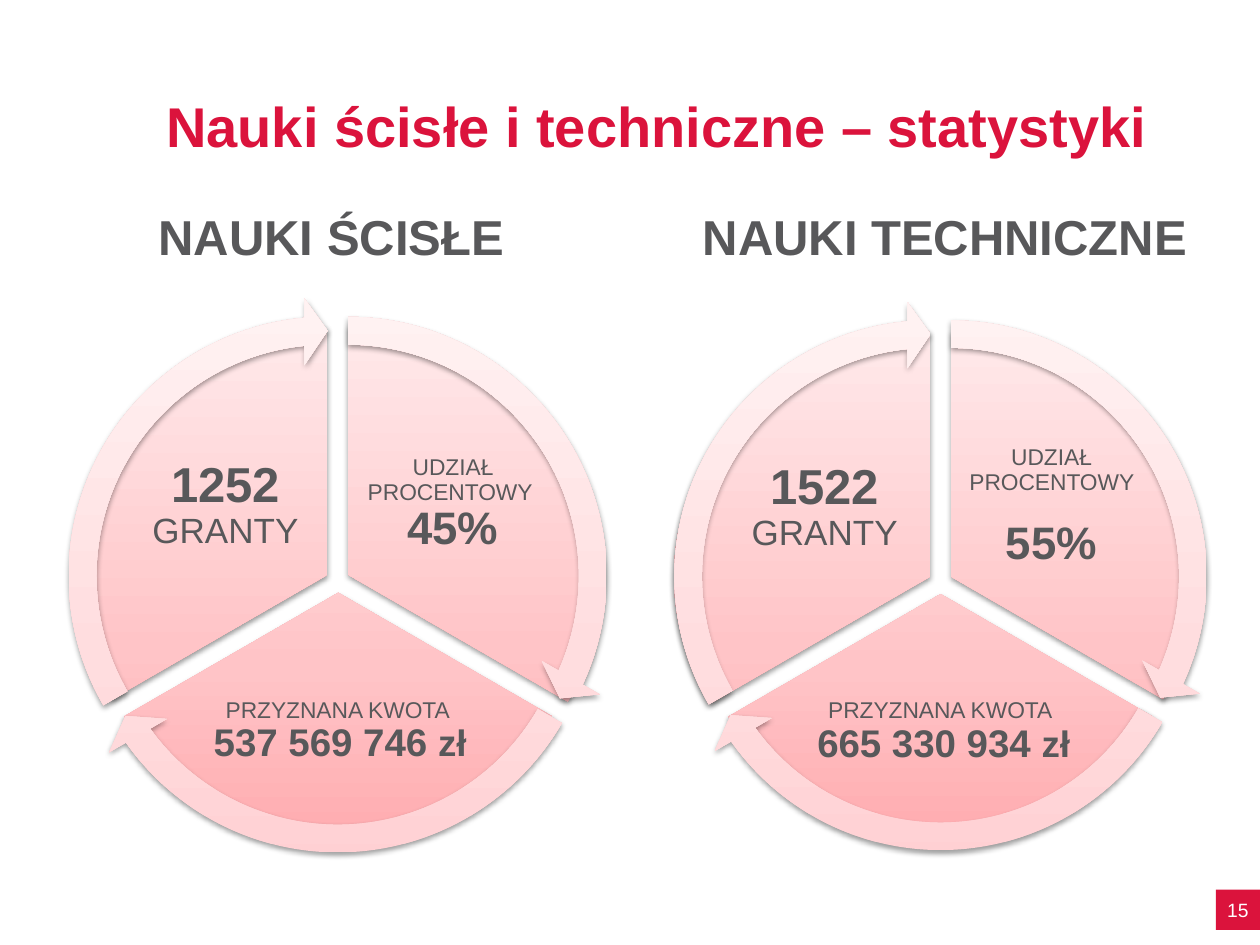
"""Build the slide of grant statistics for exact and technical sciences."""
from lxml.etree import SubElement
from pptx import Presentation
from pptx.dml.color import RGBColor
from pptx.enum.shapes import MSO_SHAPE
from pptx.enum.text import MSO_ANCHOR, PP_ALIGN
from pptx.oxml import parse_xml
from pptx.oxml.ns import nsdecls, qn
from pptx.util import Inches, Pt

CRIMSON = RGBColor(0xDB, 0x13, 0x3C)
WHITE = RGBColor(0xFF, 0xFF, 0xFF)
GRAY = RGBColor(0x58, 0x58, 0x5A)
SECTOR_STOPS = [(0, RGBColor(0xFF, 0xAC, 0xB0)), (35, RGBColor(0xFF, 0xC4, 0xC7)),
                (100, RGBColor(0xFF, 0xE9, 0xEA))]
ARROW_STOPS = [(0, RGBColor(0xFF, 0xD0, 0xD3)), (35, RGBColor(0xFF, 0xDD, 0xDF)),
               (100, RGBColor(0xFF, 0xF2, 0xF2))]
FONT = "Arial"
BREAK = "\n"

TITLE = "Nauki ścisłe i techniczne – statystyki"
PAGE_NUMBER = "15"
SECTOR_ANGLES = [(162, 18), (18, 90), (90, 162)]
ARROW_ANGLES = [(14.73, 161.99), (86.72, 18.01), (158.73, 90)]
ARROW_SHIFTS = [(0, 0), (-0.08, 0.14), (-0.16, 0)]
LABEL_INSETS = [0.02, 0.02, 0.04]

CYCLES = [
    {
        "heading": ("NAUKI ŚCISŁE", (1.16, 1.59, 3.47, 0.57)),
        "sectors": [(0.73, 2.58, 4.06, 3.96), (0.72, 2.74, 3.93, 3.93), (0.63, 2.6, 3.93, 3.93)],
        "arrow": (0.55, 2.36, 4.42),
        "labels": [
            ((2.87, 3.42, 1.45, 1.18),
             [("UDZIAŁ PROCENTOWY ", 13, False), (BREAK, 13, False), ("45%", 26, True)]),
            ((1.65, 5.29, 2.1, 1.03),
             [("PRZYZNANA KWOTA ", 13, False), (BREAK, 13, False),
              ("537 569 746 ", 22, True), ("zł", 21, True)]),
            ((1.09, 3.43, 1.4, 1.17),
             [("1252", 28, True), (" ", 22, False), ("GRANTY", 20, False)]),
        ],
    },
    {
        "heading": ("NAUKI TECHNICZNE", (5.48, 1.59, 4.34, 0.57)),
        "sectors": [(5.6, 2.63, 3.89, 3.89), (5.52, 2.77, 3.89, 3.89), (5.35, 2.63, 4.07, 3.89)],
        "arrow": (5.36, 2.39, 4.37),
        "labels": [
            ((7.65, 3.45, 1.39, 1.16),
             [("UDZIAŁ PROCENTOWY ", 13, False), (BREAK, 13, False), ("55%", 26, True)]),
            ((6.45, 5.29, 2.08, 1.02),
             [("PRZYZNANA KWOTA", 13, False), (" ", 15, False), (BREAK, 15, False),
              ("665 330 934 ", 22, True), ("zł", 21, True)]),
            ((5.82, 3.45, 1.45, 1.16),
             [("1522 ", 28, True), ("GRANTY", 20, False)]),
        ],
    },
]


def inches(box):
    return [Inches(length) for length in box]


def write(paragraph, runs, color):
    for text, size, bold in runs:
        if text == BREAK:
            paragraph.add_line_break()
            line_break = paragraph._p.findall(qn("a:br"))[-1]
            SubElement(line_break, qn("a:rPr"), sz=str(size * 100))
            continue
        run = paragraph.add_run()
        run.text = text
        run.font.name = FONT
        run.font.size = Pt(size)
        run.font.bold = bold
        run.font.color.rgb = color


def add_text(shapes, box, runs, color=GRAY, anchor=MSO_ANCHOR.TOP):
    frame = shapes.add_textbox(*inches(box)).text_frame
    frame.word_wrap = True
    frame.vertical_anchor = anchor
    write(frame.paragraphs[0], runs, color)
    return frame


def set_insets(frame, inset):
    frame.margin_left = frame.margin_right = Inches(inset)
    frame.margin_top = frame.margin_bottom = Inches(inset)


def add_glossy(shapes, preset, box, adjustments, stops):
    part = shapes.add_shape(preset, *inches(box))
    for index, value in enumerate(adjustments):
        part.adjustments[index] = value
    part.line.fill.background()
    part.shadow.inherit = False
    stop_xml = "".join(
        f'<a:gs pos="{position * 1000}"><a:srgbClr val="{color}"/></a:gs>'
        for position, color in stops)
    properties = part._element.spPr
    properties.find(qn("a:prstGeom")).addnext(parse_xml(
        f'<a:gradFill {nsdecls("a")} rotWithShape="1"><a:gsLst>{stop_xml}</a:gsLst>'
        '<a:lin ang="16200000" scaled="1"/></a:gradFill>'))
    properties.find(qn("a:effectLst")).append(parse_xml(
        f'<a:outerShdw {nsdecls("a")} blurRad="{Pt(3.1)}" dist="{Pt(1.6)}" dir="5400000" '
        'rotWithShape="0"><a:srgbClr val="000000"><a:alpha val="38000"/></a:srgbClr>'
        '</a:outerShdw>'))


def add_cycle(slide, cycle):
    shapes = slide.shapes.add_group_shape().shapes
    for sector, angles, (box, runs), inset in zip(
            cycle["sectors"], SECTOR_ANGLES, cycle["labels"], LABEL_INSETS):
        add_glossy(shapes, MSO_SHAPE.PIE, sector, angles, SECTOR_STOPS)
        label = add_text(shapes, box, runs, anchor=MSO_ANCHOR.MIDDLE)
        set_insets(label, inset)
        label.paragraphs[0].alignment = PP_ALIGN.CENTER
        label.paragraphs[0].line_spacing = 0.9
    left, top, side = cycle["arrow"]
    for (across, down), (end, start) in zip(ARROW_SHIFTS, ARROW_ANGLES):
        add_glossy(shapes, MSO_SHAPE.CIRCULAR_ARROW, (left + across, top + down, side, side),
                   (0.05, 3.28, end, start, 0.06), ARROW_STOPS)


def add_page_number(slide):
    badge = slide.shapes.add_shape(MSO_SHAPE.RECTANGLE, *inches((9.65, 7.06, 0.35, 0.32)))
    badge.shadow.inherit = False
    badge.fill.solid()
    badge.fill.fore_color.rgb = CRIMSON
    badge.line.fill.background()
    frame = badge.text_frame
    frame.word_wrap = False
    frame.vertical_anchor = MSO_ANCHOR.MIDDLE
    set_insets(frame, 0)
    frame.paragraphs[0].alignment = PP_ALIGN.CENTER
    write(frame.paragraphs[0], [(PAGE_NUMBER, 11, False)], WHITE)


def main():
    deck = Presentation()
    deck.slide_width, deck.slide_height = Inches(10), Inches(7.5)
    slide = deck.slides.add_slide(deck.slide_layouts[6])
    add_text(slide.shapes, (1.22, 0.08, 8.28, 1.23), [(TITLE, 32, True)],
             CRIMSON, MSO_ANCHOR.BOTTOM)
    add_page_number(slide)
    for cycle in CYCLES:
        add_cycle(slide, cycle)
    for cycle in CYCLES:
        heading, box = cycle["heading"]
        add_text(slide.shapes, box, [(heading, 28, True)])
    deck.save("out.pptx")


if __name__ == "__main__":
    main()
